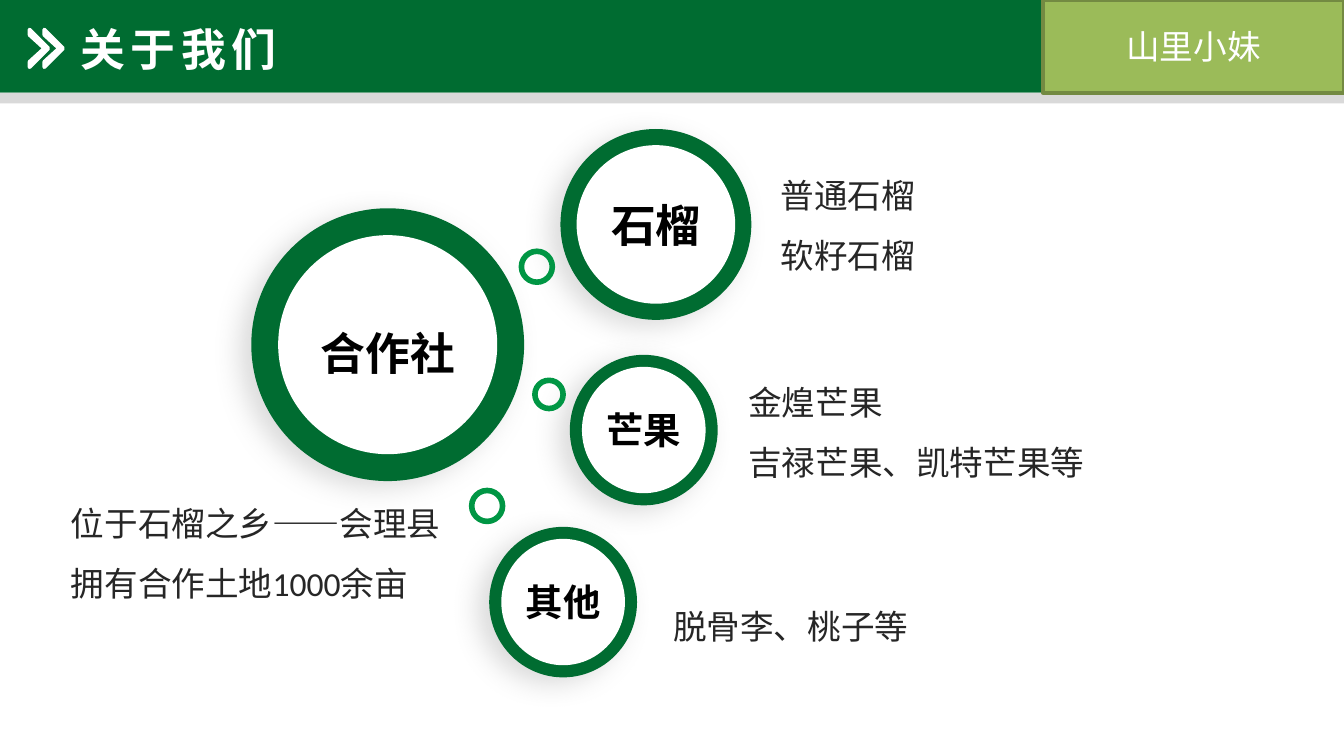
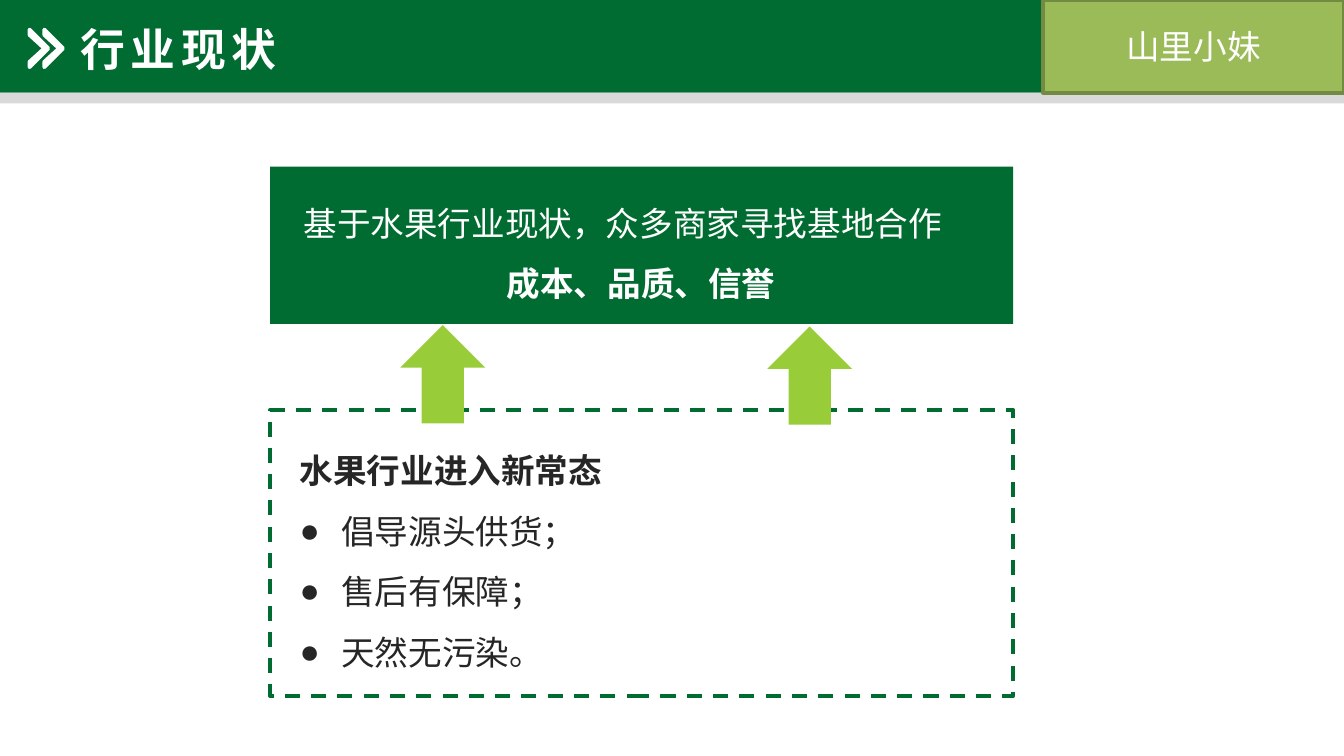
from lxml import etree
from pptx import Presentation
from pptx.dml.color import RGBColor
from pptx.enum.dml import MSO_LINE
from pptx.enum.shapes import MSO_SHAPE
from pptx.enum.text import MSO_ANCHOR, MSO_AUTO_SIZE, PP_ALIGN
from pptx.oxml.ns import qn
from pptx.util import Inches, Pt

RECT, OVAL = MSO_SHAPE.RECTANGLE, MSO_SHAPE.OVAL
UP_ARROW, PROCESS = MSO_SHAPE.UP_ARROW, MSO_SHAPE.FLOWCHART_PROCESS
LEFT, CENTER = PP_ALIGN.LEFT, PP_ALIGN.CENTER
TOP, MIDDLE = MSO_ANCHOR.TOP, MSO_ANCHOR.MIDDLE
NO_FIT, DASH = MSO_AUTO_SIZE.NONE, MSO_LINE.DASH

GREEN, RING, LIME, OLIVE = "006C31", "009644", "99CC39", "9BBB59"
OLIVE_DARK, GRAY, SHADOW = "738A42", "D9D9D9", "A6A6A6"
WHITE, BLACK, INK = "FFFFFF", "000000", "262626"
SANS, LATIN = "Noto Sans CJK SC", "Calibri"
TITLE_ONLY, TITLE_BODY = 5, 1


def rgb(color):
    return RGBColor.from_string(color)


def paint(sp, fill=None, line=None, width=2, dash=None):
    sp.shadow.inherit = False
    if fill:
        sp.fill.solid()
        sp.fill.fore_color.rgb = rgb(fill)
    else:
        sp.fill.background()
    if line:
        sp.line.color.rgb = rgb(line)
        sp.line.width = Pt(width)
        if dash:
            sp.line.dash_style = dash
    else:
        sp.line.fill.background()


def place(sp, box):
    sp.left, sp.top, sp.width, sp.height = [Inches(v) for v in box]


def add_shape(slide, kind, box, fill=None, line=None, width=2, dash=None):
    sp = slide.shapes.add_shape(kind, *[Inches(v) for v in box])
    paint(sp, fill, line, width, dash)
    return sp


def add_run(p, text, size, color, font=SANS, bold=False, spacing=None):
    r = p.add_run()
    r.text = text
    r.font.size, r.font.bold, r.font.name = Pt(size), bold, font
    r.font.color.rgb = rgb(color)
    rPr = r.font._element
    etree.SubElement(rPr, qn("a:ea")).set("typeface", SANS)
    if spacing:
        rPr.set("spc", str(spacing * 100))


def set_bullet(p, char=None, indent=0.31):
    pPr = p._p.get_or_add_pPr()
    hang = Inches(indent) if char else 0
    pPr.set("marL", str(hang))
    pPr.set("indent", str(-hang))
    if char:
        etree.SubElement(pPr, qn("a:buChar")).set("char", char)
    else:
        etree.SubElement(pPr, qn("a:buNone"))


def paragraphs(tf, count, align=LEFT, spacing=1.0):
    for i in range(count):
        p = tf.add_paragraph() if i else tf.paragraphs[0]
        p.alignment, p.line_spacing = align, spacing
        p.space_before = Pt(0)
        yield p


def add_label(sp, text, size, color, font=SANS, bold=True, spacing=1.0, margin=0):
    tf = sp.text_frame
    tf.word_wrap, tf.vertical_anchor = True, MIDDLE
    tf.margin_left = tf.margin_right = Inches(margin)
    tf.margin_top = tf.margin_bottom = Inches(margin / 2)
    p = next(paragraphs(tf, 1, CENTER, spacing))
    add_run(p, text, size, color, font, bold)


def add_textbox(slide, box):
    tf = slide.shapes.add_textbox(*[Inches(v) for v in box]).text_frame
    tf.word_wrap = True
    return tf


def add_text(slide, box, lines):
    tf = add_textbox(slide, box)
    for p, text in zip(paragraphs(tf, len(lines), spacing=1.5), lines):
        add_run(p, text, 18, INK, LATIN)


def add_shadow(sp):
    effects = sp._element.spPr.find(qn("a:effectLst"))
    shadow = etree.SubElement(effects, qn("a:outerShdw"), blurRad=str(Pt(14)),
                              dist=str(Pt(7)), dir=str(150 * 60000), rotWithShape="0")
    color = etree.SubElement(shadow, qn("a:srgbClr"), val=SHADOW)
    etree.SubElement(color, qn("a:alpha"), val="40000")


def add_node(slide, box, inset, text, size, spacing=1.0):
    x, y, w, h = box
    add_shadow(add_shape(slide, OVAL, box, GREEN))
    inner = (x + inset, y + inset, w - 2 * inset, h - 2 * inset)
    add_label(add_shape(slide, OVAL, inner, WHITE), text, size, BLACK, spacing=spacing)


def add_chevron(slide, x):
    points = [(0, 0.22), (0, 0.26), (0.11, 0.36), (0, 0.46), (0, 0.5), (0.14, 0.36)]
    points = [(Inches(x + dx), Inches(y)) for dx, y in points]
    builder = slide.shapes.build_freeform(*points[0])
    builder.add_line_segments(points[1:], close=True)
    paint(builder.convert_to_shape(), WHITE, WHITE)


def new_slide(prs, layout, title):
    slide = prs.slides.add_slide(prs.slide_layouts[layout])
    add_shape(slide, RECT, (0, 0, 7.76, 0.69), GREEN)
    add_shape(slide, RECT, (0, 0.69, 10, 0.08), GRAY)
    tag = add_shape(slide, PROCESS, (7.76, 0, 2.24, 0.69), OLIVE, OLIVE_DARK)
    add_label(tag, "山里小妹", 18, WHITE, LATIN, bold=False, margin=0.1)
    for x in (0.33, 0.22):
        add_chevron(slide, x)
    sp = slide.shapes.title
    place(sp, (0.5, 0.11, 1.72, 0.5))
    slide.shapes._spTree.append(sp._element)
    tf = sp.text_frame
    tf.word_wrap, tf.auto_size, tf.vertical_anchor = False, NO_FIT, TOP
    add_run(next(paragraphs(tf, 1)), title, 24, WHITE, bold=True, spacing=3)
    return slide


def about_slide(prs):
    slide = new_slide(prs, TITLE_ONLY, "关于我们")
    add_node(slide, (4.24, 2.64, 1.1, 1.12), 0.09, "芒果", 20)
    add_node(slide, (1.87, 1.55, 2.03, 2.03), 0.2, "合作社", 24, 1.3)
    add_node(slide, (4.17, 0.96, 1.42, 1.42), 0.12, "石榴", 24)
    add_node(slide, (3.64, 3.92, 1.1, 1.12), 0.09, "其他", 20)
    for x, y, d in [(3.88, 1.87, 0.23), (3.98, 2.83, 0.21), (3.51, 3.65, 0.23)]:
        add_shape(slide, OVAL, (x, y, d, d), line=RING, width=3)
    add_text(slide, (0.43, 3.54, 3, 1.01), ["位于石榴之乡——会理县", "拥有合作土地1000余亩"])
    add_text(slide, (5.71, 1.1, 4.26, 1.01), ["普通石榴", "软籽石榴"])
    add_text(slide, (5.47, 2.64, 4.26, 1.01), ["金煌芒果", "吉禄芒果、凯特芒果等"])
    add_text(slide, (4.91, 4.31, 4.26, 0.51), ["脱骨李、桃子等"])


def industry_slide(prs):
    slide = new_slide(prs, TITLE_BODY, "行业现状")
    add_shape(slide, RECT, (2.01, 1.24, 5.53, 1.17), GREEN)
    add_shape(slide, RECT, (2.01, 3.05, 5.53, 2.13), line=GREEN, dash=DASH)

    body = slide.placeholders[1]
    place(body, (2.13, 3.15, 5.28, 1.92))
    tf = body.text_frame
    tf.auto_size, tf.vertical_anchor = NO_FIT, TOP
    items = ["水果行业进入新常态", "倡导源头供货；", "售后有保障；", "天然无污染。"]
    for i, p in enumerate(paragraphs(tf, len(items), spacing=1.5)):
        set_bullet(p, "●" if i else None)
        add_run(p, items[i], 18, INK, bold=i == 0)

    tf = add_textbox(slide, (2.16, 1.31, 5.22, 1.01))
    need, factors = paragraphs(tf, 2, spacing=1.5)
    add_run(need, "基于水果行业现状，众多商家寻找基地合作", 18, WHITE)
    factors.alignment = CENTER
    add_run(factors, "成本、品质、信誉", 18, WHITE, bold=True)

    for x, y in [(5.71, 2.43), (2.98, 2.42)]:
        add_shape(slide, UP_ARROW, (x, y, 0.63, 0.73), LIME)


def main():
    prs = Presentation()
    prs.slide_width = Inches(10)
    prs.slide_height = prs.slide_width * 9 // 16
    about_slide(prs)
    industry_slide(prs)
    prs.save("out.pptx")


if __name__ == "__main__":
    main()
